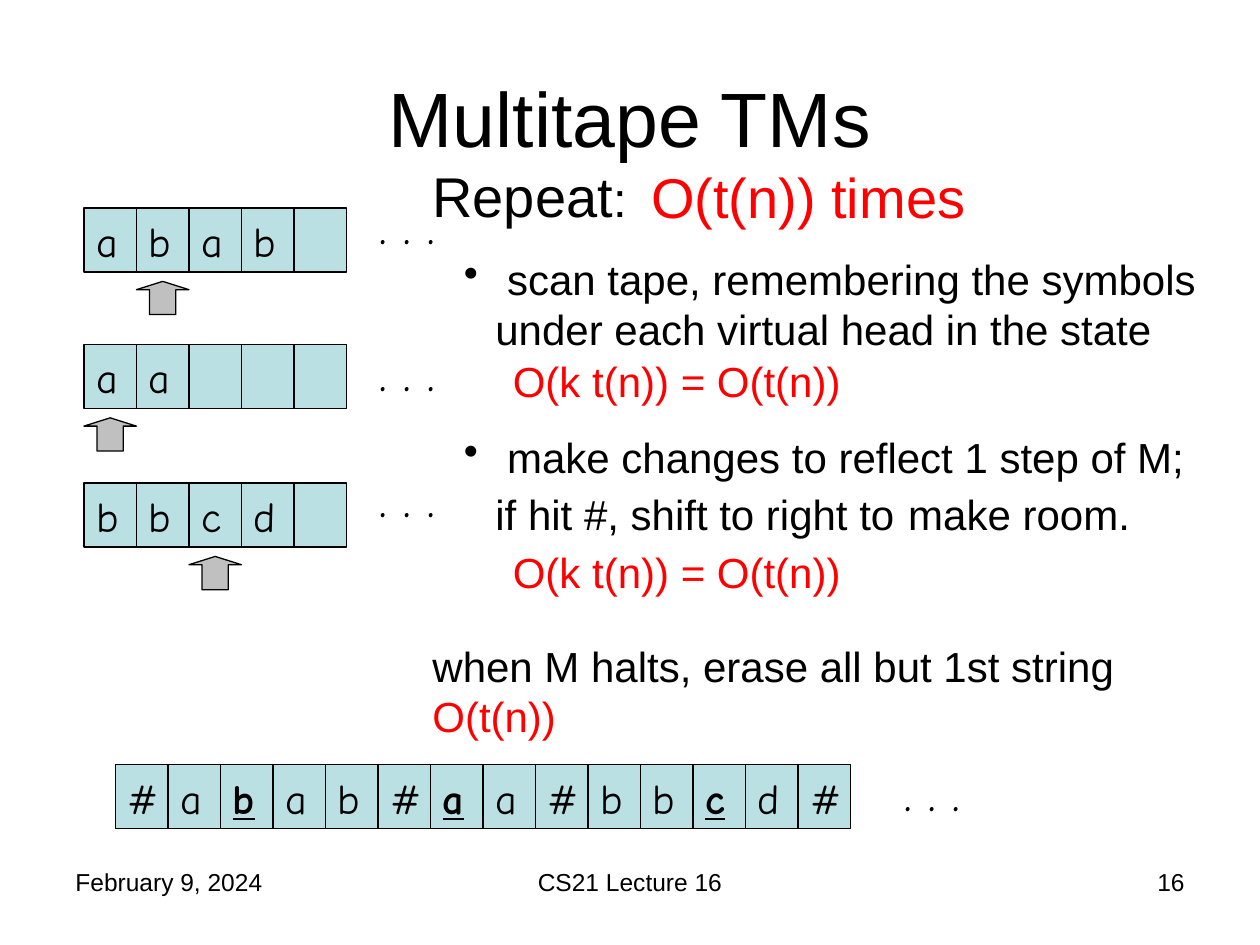
import pptx
import pptx.dml.color
import pptx.enum.shapes
import pptx.enum.text
import pptx.oxml
import pptx.oxml.ns
import pptx.util

Pt = pptx.util.Pt
RGBColor = pptx.dml.color.RGBColor
Shape = pptx.enum.shapes.MSO_SHAPE
Align = pptx.enum.text.PP_ALIGN
Anchor = pptx.enum.text.MSO_ANCHOR

BLACK = RGBColor(0x00, 0x00, 0x00)
RED = RGBColor(0xFF, 0x00, 0x00)
TAPE_BLUE = RGBColor(0xBB, 0xE0, 0xE3)
HEAD_GRAY = RGBColor(0xC0, 0xC0, 0xC0)

CELL_WIDTH = 30
CELL_HEIGHT = 36.6
TAPE_LEFT = 48


class SlideBuilder:
    body_font = "Arial"
    tape_font = "Comic Neue"

    def __init__(self, slide):
        self.slide = slide

    def run(self, paragraph, text, size, color=BLACK, **formats):
        run = paragraph.add_run()
        run.text = text
        run.font.color.rgb = color
        values = {"name": self.body_font, "size": Pt(size), **formats}
        for name, value in values.items():
            setattr(run.font, name, value)

    def title(self, text, left, top, width, height):
        shape = self.slide.shapes.title
        bounds = {"left": left, "top": top, "width": width, "height": height}
        for name, value in bounds.items():
            setattr(shape, name, Pt(value))
        shape.text_frame.vertical_anchor = Anchor.MIDDLE
        paragraph = shape.text_frame.paragraphs[0]
        paragraph.alignment = Align.CENTER
        self.run(paragraph, text, 44)

    def text_frame(self, left, top, width, height, anchor=Anchor.TOP):
        box = self.slide.shapes.add_textbox(Pt(left), Pt(top), Pt(width), Pt(height))
        box.text_frame.word_wrap = True
        box.text_frame.vertical_anchor = anchor
        return box.text_frame

    def label(self, text, left, top, width, height, size,
              color=BLACK, align=Align.LEFT):
        paragraph = self.text_frame(left, top, width, height).paragraphs[0]
        paragraph.alignment = align
        self.run(paragraph, text, size, color)

    def dots(self, left, top, width):
        frame = self.text_frame(left, top, width, 41, Anchor.BOTTOM)
        self.run(frame.paragraphs[0], ". . .", 28, name=self.tape_font)

    def outlined(self, kind, left, top, width, height, fill):
        shape = self.slide.shapes.add_shape(
            kind, Pt(left), Pt(top), Pt(width), Pt(height))
        shape.shadow.inherit = False
        shape.fill.solid()
        shape.fill.fore_color.rgb = fill
        shape.line.color.rgb = BLACK
        shape.line.width = Pt(0.75)
        return shape

    def tape(self, symbols, left, top, marked=()):
        """Draw one cell per symbol; marked cells are bold and underlined."""
        for index, symbol in enumerate(symbols):
            cell = self.outlined(Shape.RECTANGLE, left + index * CELL_WIDTH, top,
                                 CELL_WIDTH, CELL_HEIGHT, TAPE_BLUE)
            if symbol == " ":
                continue
            frame = cell.text_frame
            frame.word_wrap = True
            frame.vertical_anchor = Anchor.BOTTOM
            frame.paragraphs[0].alignment = Align.LEFT
            virtual_head = index in marked
            self.run(frame.paragraphs[0], symbol, 24, name=self.tape_font,
                     bold=virtual_head, underline=virtual_head)

    def head(self, cell_index, tape_top):
        arrow = self.outlined(Shape.UP_ARROW, TAPE_LEFT + cell_index * CELL_WIDTH,
                              tape_top + 42, CELL_WIDTH, 19, HEAD_GRAY)
        arrow.adjustments[0] = 0.5
        arrow.adjustments[1] = 0.25

    def algorithm(self, paragraphs, left, top, width, height):
        """Each paragraph is (space before, has bullet, [(text, size), ...])."""
        frame = self.text_frame(left, top, width, height)
        frame.margin_top = Pt(6)
        for index, (space, bullet, runs) in enumerate(paragraphs):
            paragraph = frame.add_paragraph() if index else frame.paragraphs[0]
            paragraph.space_before = Pt(space)
            if bullet:
                self.bullet(paragraph)
            for text, size in runs:
                self.run(paragraph, text, size)

    def bullet(self, paragraph):
        properties = paragraph._p.get_or_add_pPr()
        properties.set("marL", str(Pt(36)))
        properties.set("indent", str(-Pt(18)))
        properties.append(pptx.oxml.parse_xml(
            f'<a:buChar {pptx.oxml.ns.nsdecls("a")} char="•"/>'))


def main():
    presentation = pptx.Presentation()
    presentation.slide_width = Pt(720)
    presentation.slide_height = Pt(540)
    slide = presentation.slides.add_slide(presentation.slide_layouts[5])
    builder = SlideBuilder(slide)

    for text, left, width, align in (
        ("February 9, 2024", 36, 168, Align.LEFT),
        ("CS21 Lecture 16", 246, 228, Align.CENTER),
        ("16", 516, 168, Align.RIGHT),
    ):
        builder.label(text, left, 492, width, 37.5, 14, align=align)
    builder.title("Multitape TMs", 36, 21.6, 648, 90)

    for symbols, top, head_cell, dots_top in (
        ("abab ", 118.8, 1, 108),
        ("aa   ", 196.8, 0, 192),
        ("bbcd ", 276, 2, 264),
    ):
        builder.tape(symbols, TAPE_LEFT, top)
        builder.head(head_cell, top)
        builder.dots(210, dots_top, 114)

    builder.tape("#abab#aa#bbcd#", 66, 437, marked=(2, 6, 11))
    builder.dots(510, 432, 66)

    builder.algorithm([
        (0, False, [("Repeat", 32), (":", 28)]),
        (14, True, [(" scan tape, remembering the symbols under each "
                     "virtual head in the state", 24)]),
        (44, True, [(" make changes to reflect 1 step of M; "
                     "if hit #, shift to right to", 24),
                    (" ", 28), ("make room.", 24)]),
        (57, False, [("when M halts, erase all but 1st string", 24)]),
    ], 240, 86.4, 461, 312.5)

    for text, left, top, width, height, size in (
        ("O(t(n)) times", 365, 89.5, 240, 46, 32),
        ("O(k t(n)) = O(t(n))", 286, 199.5, 227, 36.5, 24),
        ("O(k t(n)) = O(t(n))", 286, 309, 227, 36.5, 24),
        ("O(t(n))", 240, 391, 227, 36.5, 24),
    ):
        builder.label(text, left, top, width, height, size, RED)

    presentation.save("out.pptx")


if __name__ == "__main__":
    main()
